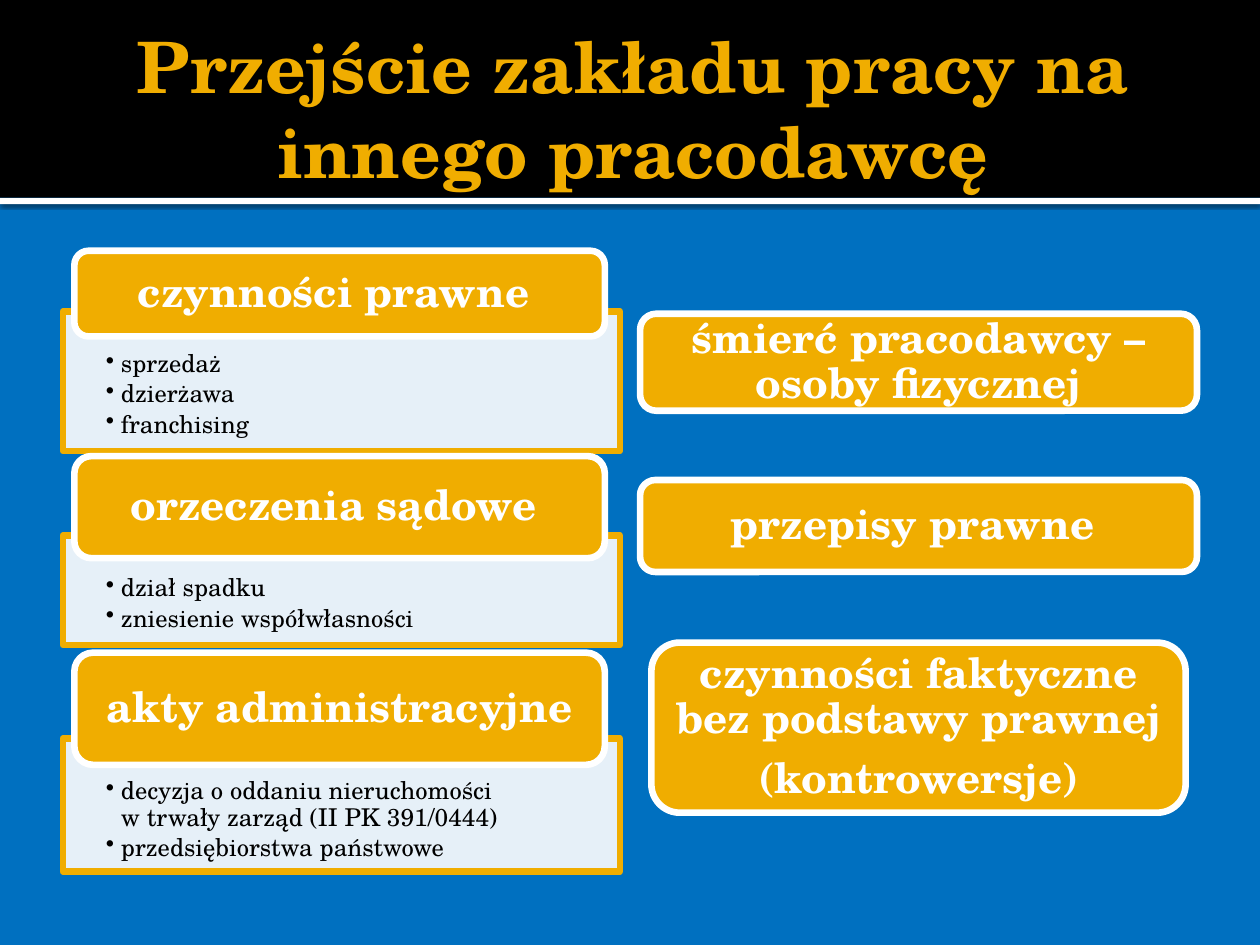
from dataclasses import dataclass
from typing import Any

from lxml.etree import SubElement
from pptx import Presentation
from pptx.dml.color import RGBColor
from pptx.enum.shapes import MSO_SHAPE as Kind
from pptx.enum.text import MSO_ANCHOR as Anchor, PP_ALIGN as Align
from pptx.oxml.ns import qn
from pptx.util import Inches, Pt

GOLD = RGBColor(0xF0, 0xAD, 0x00)
WHITE = RGBColor(0xFF, 0xFF, 0xFF)
BLACK = RGBColor(0, 0, 0)
BLUE = RGBColor(0x00, 0x70, 0xC0)
FACE = "TeX Gyre Schola"
EDGE = 3.78
CORNER = 0.05


@dataclass
class Box:
    left: float
    top: float
    width: float
    height: float


@dataclass
class Style:
    font: dict[str, Any]
    para: dict[str, Any]
    color: RGBColor
    anchor: Any
    pads: tuple[float, float, float, float]
    bullet: bool = False


@dataclass
class Group:
    head: str
    top: float
    height: float
    list_top: float
    list_height: float
    items: list[str]


@dataclass
class Card:
    box: Box
    lines: list[str]


TITLE = Style({"name": FACE, "size": Pt(40.5), "bold": True},
              {"alignment": Align.CENTER}, GOLD, Anchor.MIDDLE, (0.1, 0.05, 0.05, 0.05))
HEAD = Style({"name": FACE, "size": Pt(24), "bold": True},
             {"alignment": Align.CENTER, "line_spacing": 0.9, "space_after": Pt(8.4)},
             WHITE, Anchor.MIDDLE, (0.09, 0, 0.09, 0))
LIST = Style({"name": FACE, "size": Pt(14), "bold": False},
             {"alignment": Align.LEFT, "line_spacing": 0.9, "space_after": Pt(2.1)},
             BLACK, Anchor.TOP, (0.34, 0.32, 0.34, 0.11), True)
GROUPS = [
    Group("czynności prawne ", 1.99, 0.68, 2.47, 1.11, ["sprzedaż", "dzierżawa", "franchising"]),
    Group("orzeczenia sądowe ", 3.62, 0.81, 4.25, 0.87,
          ["dział spadku", "zniesienie współwłasności"]),
    Group("akty administracyjne", 5.18, 0.89, 5.86, 1.06,
          ["decyzja o oddaniu nieruchomości \vw trwały zarząd (II PK 391/0444)",
           "przedsiębiorstwa państwowe"]),
]
CARDS = [
    Card(Box(5.08, 2.49, 4.42, 0.77), ["śmierć pracodawcy – osoby fizycznej"]),
    Card(Box(5.08, 3.81, 4.42, 0.73), ["przepisy prawne "]),
    Card(Box(5.17, 5.1, 4.24, 1.35),
         ["czynności faktyczne bez podstawy prawnej ", "(kontrowersje)"]),
]


def place(box: Box) -> list[int]:
    return [Inches(v) for v in (box.left, box.top, box.width, box.height)]


def add_shape(slide: Any, kind: Any, box: Box, fill: RGBColor, line: RGBColor | None = None) -> Any:
    shape = slide.shapes.add_shape(kind, *place(box))
    shape.shadow.inherit = False
    shape.fill.solid()
    shape.fill.fore_color.rgb = fill
    if line is None:
        shape.line.fill.background()
    else:
        shape.line.color.rgb = line
        shape.line.width = Pt(EDGE)
    return shape


def add_bullet(para: Any) -> None:
    props = para._p.get_or_add_pPr()
    props.set("marL", str(Inches(0.12)))
    props.set("indent", str(Inches(-0.12)))
    SubElement(props, qn("a:buChar"), char="•")


def write(shape: Any, lines: list[str], style: Style) -> None:
    frame = shape.text_frame
    frame.word_wrap = True
    frame.vertical_anchor = style.anchor
    for side, pad in zip(("left", "top", "right", "bottom"), style.pads):
        setattr(frame, f"margin_{side}", Inches(pad))
    for num, line in enumerate(lines):
        para = frame.add_paragraph() if num else frame.paragraphs[0]
        para.text = line
        for key, value in style.para.items():
            setattr(para, key, value)
        if style.bullet:
            add_bullet(para)
        for run in para.runs:
            for key, value in style.font.items():
                setattr(run.font, key, value)
            run.font.color.rgb = style.color


def set_alpha(shape: Any, share: int) -> None:
    tint = shape._element.spPr.find(qn("a:solidFill"))[0]
    SubElement(tint, qn("a:alpha"), val=str(share * 1000))


def add_shade(shape: Any) -> None:
    effects = shape._element.spPr.find(qn("a:effectLst"))
    shade = SubElement(effects, qn("a:outerShdw"), blurRad=str(Pt(2.5)), dist=str(Pt(0.8)),
                       dir="5400000", algn="tl", rotWithShape="0")
    tint = SubElement(shade, qn("a:srgbClr"), val=str(BLACK))
    SubElement(tint, qn("a:alpha"), val="60000")


def draw_card(slide: Any, card: Card) -> None:
    shape = add_shape(slide, Kind.ROUNDED_RECTANGLE, card.box, GOLD, WHITE)
    write(shape, card.lines, HEAD)


def draw_group(slide: Any, group: Group) -> None:
    panel = add_shape(slide, Kind.RECTANGLE,
                      Box(0.5, group.list_top, 4.42, group.list_height), WHITE, GOLD)
    set_alpha(panel, 90)
    write(panel, group.items, LIST)
    draw_card(slide, Card(Box(0.59, group.top, 4.21, group.height), [group.head]))


def main() -> None:
    deck = Presentation()
    deck.slide_width, deck.slide_height = Inches(10), Inches(7.5)
    slide = deck.slides.add_slide(deck.slide_layouts[6])
    slide.background.fill.solid()
    slide.background.fill.fore_color.rgb = BLUE
    add_shade(add_shape(slide, Kind.RECTANGLE, Box(0, 1.57, 10, 0.05), WHITE))
    add_shape(slide, Kind.RECTANGLE, Box(0, 0, 10, 1.57), BLACK)
    title = slide.shapes.add_textbox(*place(Box(0.5, 0.17, 9, 1.37)))
    write(title, ["Przejście zakładu pracy na innego pracodawcę"], TITLE)
    for group in GROUPS:
        draw_group(slide, group)
    for card in CARDS:
        draw_card(slide, card)
    deck.save("out.pptx")


if __name__ == "__main__":
    main()
